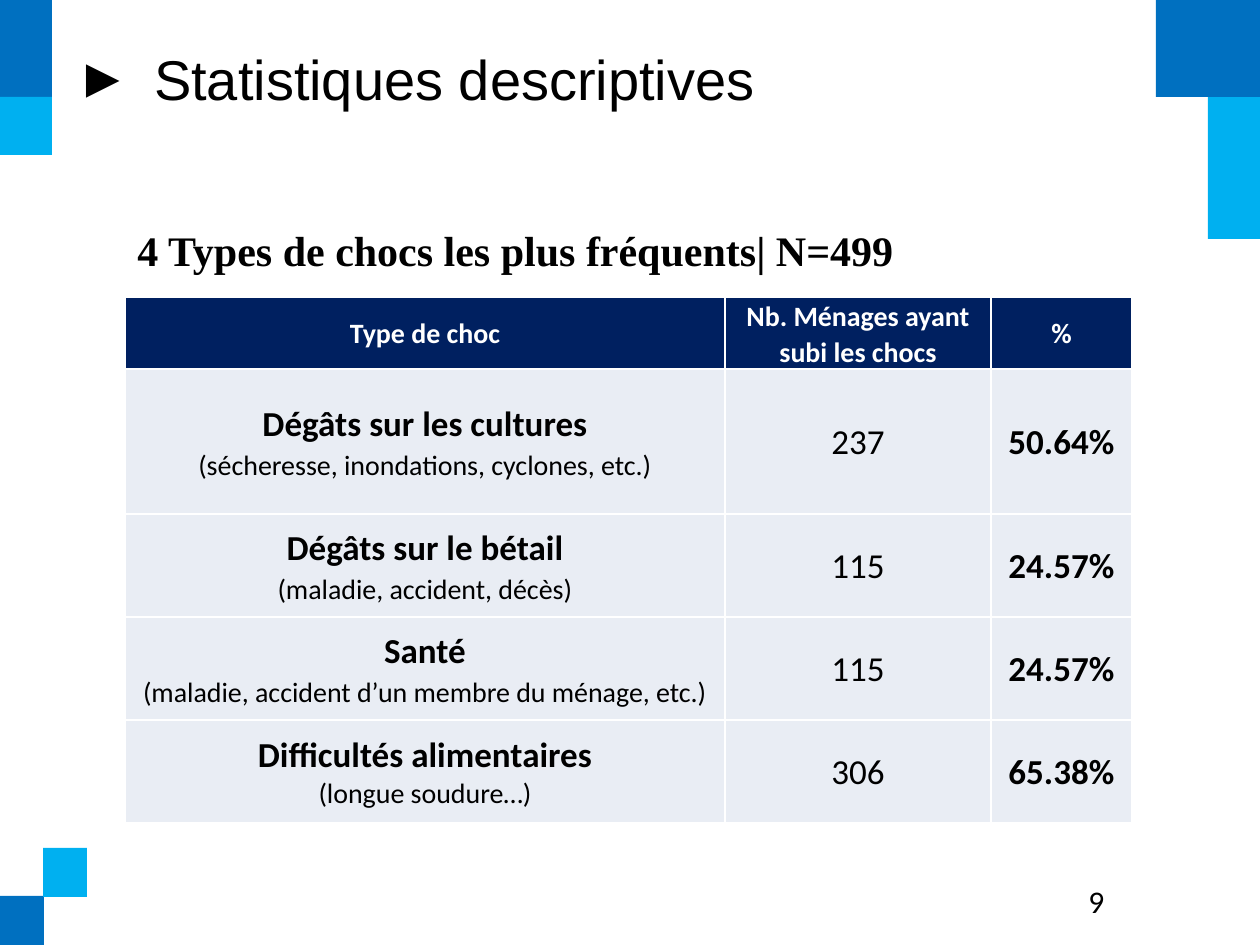
from dataclasses import dataclass

from lxml import etree
from pptx import Presentation
from pptx.dml.color import RGBColor
from pptx.enum.shapes import MSO_SHAPE
from pptx.enum.text import MSO_ANCHOR, PP_ALIGN
from pptx.oxml.ns import qn
from pptx.util import Emu, Pt

EMU_PER_PIXEL = 914400 / 126
RECTANGLE = MSO_SHAPE.RECTANGLE
TOP = MSO_ANCHOR.TOP
MIDDLE = MSO_ANCHOR.MIDDLE
LEFT = PP_ALIGN.LEFT
CENTER = PP_ALIGN.CENTER

BLACK = "000000"
WHITE = "FFFFFF"
BLUE = "0070C0"
SKY = "00B0F0"
NAVY = "002060"
PALE = "E9EDF4"


@dataclass(frozen=True)
class Box:
    left: int
    top: int
    width: int
    height: int


@dataclass(frozen=True)
class Block:
    box: Box
    color: str


@dataclass(frozen=True)
class TextStyle:
    size: int
    font: str = "Calibri"
    color: str = BLACK
    bold: bool = False


@dataclass(frozen=True)
class Shock:
    name: str
    detail: str
    households: str
    share: str
    row_height: int
    detail_spacing: float = 1.07


@dataclass(frozen=True)
class Line:
    text: str
    style: TextStyle
    space_after: int = 0
    spacing: float = 1.07


HEADER = TextStyle(16, color=WHITE, bold=True)
STRONG = TextStyle(20, bold=True)
VALUE = TextStyle(20)
DETAIL = TextStyle(16)

BLOCKS = [
    Block(Box(1208, 0, 52, 239), SKY),
    Block(Box(1156, 0, 104, 97), BLUE),
    Block(Box(0, 0, 52, 97), BLUE),
    Block(Box(0, 97, 52, 58), SKY),
    Block(Box(0, 896, 44, 49), BLUE),
    Block(Box(43, 848, 44, 49), SKY),
]
HEADINGS = ["Type de choc", "Nb. Ménages ayant subi les chocs", "%"]
HEADER_HEIGHT = 71
COLUMN_WIDTHS = [600, 266, 141]
SHOCKS = [
    Shock("Dégâts sur les cultures", "(sécheresse, inondations, cyclones, etc.)",
          "237", "50.64%", 145),
    Shock("Dégâts sur le bétail", "(maladie, accident, décès)", "115", "24.57%", 103),
    Shock("Santé", "(maladie, accident d’un membre du ménage, etc.)",
          "115", "24.57%", 103),
    Shock("Difficultés alimentaires", "(longue soudure…)", "306", "65.38%", 103, 1.0),
]


def px(length: int) -> Emu:
    return Emu(round(length * EMU_PER_PIXEL))


def rgb(color: str) -> RGBColor:
    return RGBColor.from_string(color)


def place(box: Box) -> tuple[Emu, Emu, Emu, Emu]:
    return px(box.left), px(box.top), px(box.width), px(box.height)


def style_paragraph(paragraph, style: TextStyle) -> None:
    for run in paragraph.runs:
        run.font.size = Pt(style.size)
        run.font.name = style.font
        run.font.bold = style.bold
        run.font.color.rgb = rgb(style.color)


def add_block(slide, block: Block) -> None:
    shape = slide.shapes.add_shape(RECTANGLE, *place(block.box))
    shape.shadow.inherit = False
    shape.fill.solid()
    shape.fill.fore_color.rgb = rgb(block.color)
    shape.line.fill.background()


def add_text(slide, box: Box, text: str, style: TextStyle, anchor) -> None:
    text_frame = slide.shapes.add_textbox(*place(box)).text_frame
    text_frame.word_wrap = True
    text_frame.vertical_anchor = anchor
    text_frame.text = text
    style_paragraph(text_frame.paragraphs[0], style)


def set_title(slide, box: Box, text: str) -> None:
    title = slide.shapes.title
    title.left, title.top, title.width, title.height = place(box)
    title.text_frame.text = text
    title.text_frame.vertical_anchor = TOP
    paragraph = title.text_frame.paragraphs[0]
    paragraph.alignment = LEFT
    style_paragraph(paragraph, TextStyle(32, "Arial"))
    properties = paragraph._p.get_or_add_pPr()
    properties.set("marL", str(px(63)))
    properties.set("indent", str(px(-63)))
    etree.SubElement(properties, qn("a:buFont"), typeface="Arial")
    etree.SubElement(properties, qn("a:buChar"), char="►")


def add_borders(cell) -> None:
    properties = cell._tc.get_or_add_tcPr()
    for index, side in enumerate(("lnL", "lnR", "lnT", "lnB")):
        border = etree.Element(qn(f"a:{side}"), w=str(Pt(1)))
        fill = etree.SubElement(border, qn("a:solidFill"))
        etree.SubElement(fill, qn("a:srgbClr"), val=WHITE)
        properties.insert(index, border)


def fill_cell(cell, lines: list[Line], color: str) -> None:
    cell.fill.solid()
    cell.fill.fore_color.rgb = rgb(color)
    cell.vertical_anchor = MIDDLE
    cell.margin_left = cell.margin_right = px(9)
    cell.margin_top = cell.margin_bottom = 0
    cell.text_frame.text = "\n".join(line.text for line in lines)
    for paragraph, line in zip(cell.text_frame.paragraphs, lines):
        paragraph.alignment = CENTER
        paragraph.line_spacing = line.spacing
        paragraph.space_after = Pt(line.space_after)
        style_paragraph(paragraph, line.style)
    add_borders(cell)


def add_shock_table(slide, left: int, top: int) -> None:
    heights = [HEADER_HEIGHT] + [shock.row_height for shock in SHOCKS]
    box = Box(left, top, sum(COLUMN_WIDTHS), sum(heights))
    table = slide.shapes.add_table(len(heights), len(COLUMN_WIDTHS), *place(box)).table
    table.first_row = False
    table.horz_banding = False
    for column, width in zip(table.columns, COLUMN_WIDTHS):
        column.width = px(width)
    for row, height in zip(table.rows, heights):
        row.height = px(height)
    for index, heading in enumerate(HEADINGS):
        fill_cell(table.cell(0, index), [Line(heading, HEADER)], NAVY)
    for row_index, shock in enumerate(SHOCKS, start=1):
        contents = [
            [Line(shock.name, STRONG),
             Line(shock.detail, DETAIL, spacing=shock.detail_spacing)],
            [Line(shock.households, VALUE, space_after=8)],
            [Line(shock.share, STRONG, space_after=8)],
        ]
        for column_index, lines in enumerate(contents):
            fill_cell(table.cell(row_index, column_index), lines, PALE)


def main() -> None:
    presentation = Presentation()
    presentation.slide_width = px(1260)
    presentation.slide_height = px(945)
    slide = presentation.slides.add_slide(presentation.slide_layouts[5])
    for block in BLOCKS:
        add_block(slide, block)
    add_text(slide, Box(125, 218, 969, 63),
             "4 Types de chocs\u00a0les plus fréquents| N=499".replace("\u00a0", " "),
             TextStyle(24, "Times New Roman", bold=True), MIDDLE)
    set_title(slide, Box(63, 38, 1134, 107), " Statistiques descriptives")
    add_shock_table(slide, 125, 297)
    add_text(slide, Box(1076, 876, 121, 50), "9", TextStyle(18), TOP)
    presentation.save("out.pptx")


if __name__ == "__main__":
    main()
